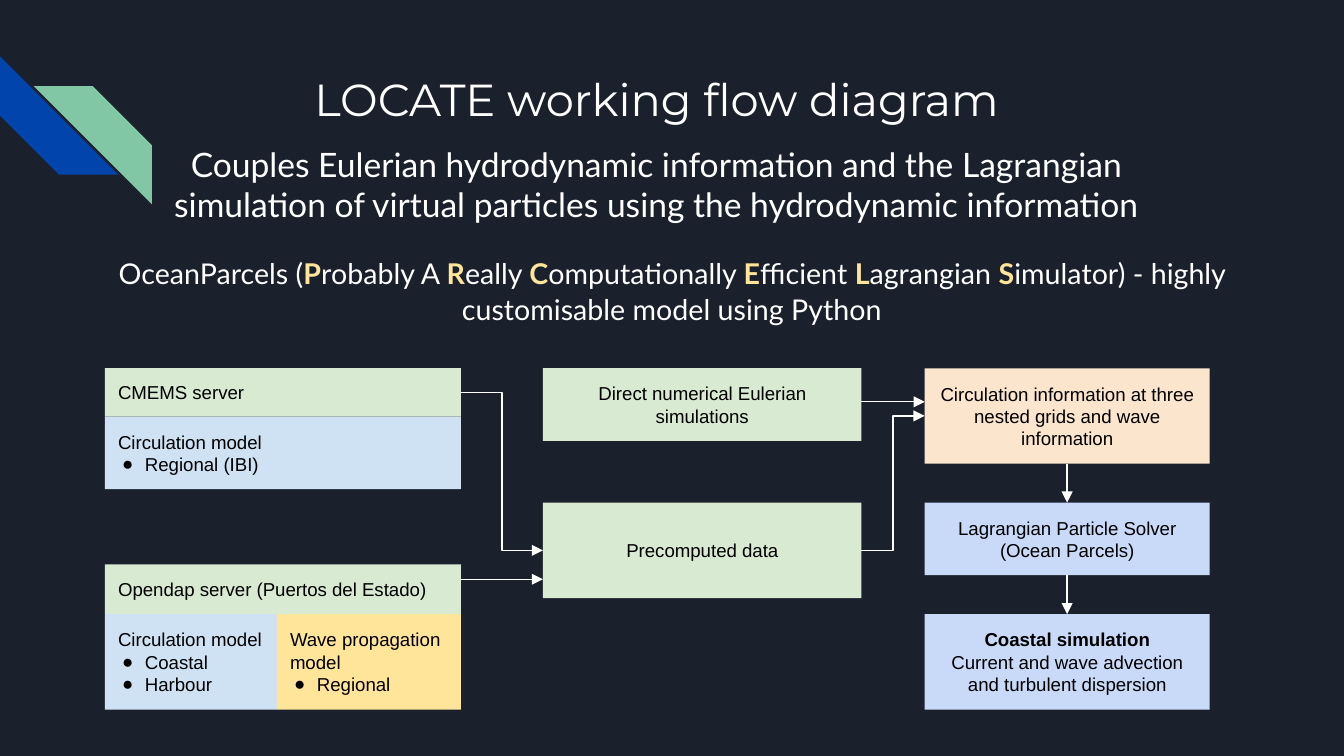
"""Build the LOCATE working flow diagram slide."""
from dataclasses import dataclass
from typing import Any

from lxml.etree import SubElement
from pptx import Presentation
from pptx.dml.color import RGBColor
from pptx.enum.shapes import MSO_CONNECTOR, MSO_SHAPE
from pptx.enum.text import MSO_ANCHOR, MSO_AUTO_SIZE, PP_ALIGN
from pptx.oxml.ns import qn
from pptx.util import Inches, Pt

WHITE = RGBColor(0xFF, 0xFF, 0xFF)
BLACK = RGBColor(0x00, 0x00, 0x00)
NAVY = RGBColor(0x1B, 0x21, 0x2C)
BLUE = RGBColor(0x01, 0x45, 0xAC)
MINT = RGBColor(0x82, 0xC7, 0xA5)
GREEN = RGBColor(0xD9, 0xEA, 0xD3)
SKY = RGBColor(0xCF, 0xE2, 0xF3)
YELLOW = RGBColor(0xFF, 0xE5, 0x99)
PEACH = RGBColor(0xFC, 0xE5, 0xCD)
PERIWINKLE = RGBColor(0xC9, 0xDA, 0xF8)

WIDTH = Inches(10)
HEIGHT = WIDTH * 9 // 16
COLS = (0.78, 2.06, 3.43, 4.04, 6.41, 6.88, 9.0)
ROWS = (2.74, 3.1, 3.28, 3.45, 3.64, 3.74, 4.2, 4.28, 4.45, 4.57, 5.28)


@dataclass(frozen=True)
class Style:
    """Format of a block of text; accent colours the words between asterisks."""
    font: str
    size: float
    color: RGBColor
    accent: RGBColor
    para: dict[str, Any]


@dataclass(frozen=True)
class Box:
    """Filled box between grid edges; lines starting with '- ' are bullets."""
    name: str
    cols: tuple[int, int]
    rows: tuple[int, int]
    fill: RGBColor
    lines: tuple[str, ...]
    align: PP_ALIGN = PP_ALIGN.CENTER


@dataclass(frozen=True)
class Link:
    """Arrow joining connection sites of two boxes."""
    start: str
    start_site: int
    end: str
    end_site: int
    kind: MSO_CONNECTOR = MSO_CONNECTOR.STRAIGHT


LEFT = PP_ALIGN.LEFT
BOXES = (
    Box("direct", (3, 4), (0, 2), GREEN, ("Direct numerical Eulerian simulations",)),
    Box("precomputed", (3, 4), (5, 8), GREEN, ("Precomputed data",)),
    Box("opendap", (0, 2), (6, 9), GREEN, ("Opendap server (Puertos del Estado)",), LEFT),
    Box("cmems", (0, 2), (0, 1), GREEN, ("CMEMS server",), LEFT),
    Box("local", (0, 1), (9, 10), SKY, ("Circulation model", "- Coastal", "- Harbour"), LEFT),
    Box("regional", (0, 2), (1, 4), SKY, ("Circulation model", "- Regional (IBI)"), LEFT),
    Box("wave", (1, 2), (9, 10), YELLOW, ("Wave propagation model", "- Regional"), LEFT),
    Box("nested", (5, 6), (0, 3), PEACH,
        ("Circulation information at three nested grids and wave information",)),
    Box("solver", (5, 6), (5, 7), PERIWINKLE, ("Lagrangian Particle Solver (Ocean Parcels)",)),
    Box("coastal", (5, 6), (9, 10), PERIWINKLE,
        ("*Coastal simulation*", "Current and wave advection and turbulent dispersion")),
)
LINKS = (
    Link("cmems", 3, "precomputed", 1, MSO_CONNECTOR.ELBOW),
    Link("precomputed", 3, "nested", 1, MSO_CONNECTOR.ELBOW),
    Link("nested", 2, "solver", 0),
    Link("solver", 2, "coastal", 0),
)
SIDE_ARROWS = ((COLS[4], COLS[5], 2.99), (COLS[2], COLS[3], 4.31))

CENTERED = {"alignment": PP_ALIGN.CENTER}
TITLE = Style("Montserrat", 24, WHITE, WHITE, CENTERED)
SUBTITLE = Style("Lato", 18, WHITE, WHITE, CENTERED)
BODY = Style("Lato", 15.3, WHITE, YELLOW,
             CENTERED | {"line_spacing": 1.05, "space_after": Pt(12)})


def set_all(obj: Any, values: dict[str, Any]) -> None:
    """Set every attribute named in values."""
    for name, value in values.items():
        setattr(obj, name, value)


def add_bullet(p: Any) -> None:
    """Give a paragraph a hanging black bullet."""
    pPr = p._p.get_or_add_pPr()
    pPr.set("marL", str(Inches(0.2)))
    pPr.set("indent", str(Inches(-0.17)))
    color = SubElement(pPr, qn("a:buClr"))
    SubElement(color, qn("a:srgbClr"), val=str(BLACK))
    SubElement(pPr, qn("a:buFont"), typeface="Arial")
    SubElement(pPr, qn("a:buChar"), char="●")


def write(tf: Any, lines: tuple[str, ...], style: Style, anchor: MSO_ANCHOR) -> None:
    """Fill a text frame, setting words between asterisks in bold accent."""
    set_all(tf, {"word_wrap": True, "auto_size": MSO_AUTO_SIZE.NONE, "vertical_anchor": anchor}
            | {f"margin_{side}": Inches(0.1) for side in ("left", "right", "top", "bottom")})
    for i, line in enumerate(lines):
        p = tf.add_paragraph() if i else tf.paragraphs[0]
        set_all(p, style.para)
        if line.startswith("- "):
            add_bullet(p)
        for j, part in enumerate(line.removeprefix("- ").split("*")):
            if part:
                r = p.add_run()
                r.text = part
                strong = j % 2 == 1
                set_all(r.font, {"name": style.font, "size": Pt(style.size), "bold": strong})
                r.font.color.rgb = style.accent if strong else style.color


def add_filled(s: Any, shape: MSO_SHAPE, at: tuple[float, ...], fill: RGBColor) -> Any:
    """Add a plain filled shape without outline or shadow."""
    sp = s.shapes.add_shape(shape, *map(Inches, at))
    sp.shadow.inherit = False
    sp.fill.solid()
    sp.fill.fore_color.rgb = fill
    sp.line.fill.background()
    return sp


def add_box(s: Any, box: Box) -> Any:
    """Draw one box of the diagram."""
    (left, right), (top, bottom) = (COLS[i] for i in box.cols), (ROWS[i] for i in box.rows)
    sp = add_filled(s, MSO_SHAPE.RECTANGLE, (left, top, right - left, bottom - top), box.fill)
    style = Style("Arial", 10, BLACK, BLACK, {"alignment": box.align})
    write(sp.text_frame, box.lines, style, MSO_ANCHOR.MIDDLE)
    return sp


def add_arrow(s: Any, kind: MSO_CONNECTOR, ends: tuple[float, ...] = (0, 0, 0, 0)) -> Any:
    """Add a thin white arrow."""
    c = s.shapes.add_connector(kind, *map(Inches, ends))
    c.line.width = Pt(0.75)
    c.line.color.rgb = WHITE
    spPr = c._element.spPr
    SubElement(spPr.get_or_add_ln(), qn("a:tailEnd"), type="triangle")
    SubElement(spPr, qn("a:effectLst"))
    return c


def main() -> None:
    """Build and save the slide."""
    prs = Presentation()
    set_all(prs, {"slide_width": WIDTH, "slide_height": HEIGHT})
    s = prs.slides.add_slide(prs.slide_layouts[5])
    s.background.fill.solid()
    s.background.fill.fore_color.rgb = NAVY

    stripe = add_filled(s, MSO_SHAPE.DIAGONAL_STRIPE, (0, 0.42, 0.88, 0.88), BLUE)
    stripe.rotation = 270
    stripe = add_filled(s, MSO_SHAPE.DIAGONAL_STRIPE, (0.25, 0.64, 0.88, 0.88), MINT)
    stripe._element.spPr.xfrm.set("flipH", "1")

    title = s.shapes.title
    set_all(title, {"left": Inches(1.18), "top": Inches(0.43),
                    "width": Inches(7.41), "height": Inches(1)})
    write(title.text_frame, ("LOCATE working flow diagram",), TITLE, MSO_ANCHOR.TOP)

    shapes = {box.name: add_box(s, box) for box in BOXES}
    for link in LINKS:
        c = add_arrow(s, link.kind)
        c.begin_connect(shapes[link.start], link.start_site)
        c.end_connect(shapes[link.end], link.end_site)
    for x1, x2, y in SIDE_ARROWS:
        add_arrow(s, MSO_CONNECTOR.STRAIGHT, (x1, y, x2, y))

    texts = (
        ((1.18, 0.97, 7.41, 0.81), SUBTITLE,
         "Couples Eulerian hydrodynamic information and the Lagrangian "
         "simulation of virtual particles using the hydrodynamic information"),
        ((0.69, 1.79, 8.62, 0.89), BODY,
         "OceanParcels (*P*robably A *R*eally *C*omputationally *E*fficient "
         "*L*agrangian *S*imulator) - highly customisable model using Python"),
    )
    for at, style, text in texts:
        tb = s.shapes.add_textbox(*map(Inches, at))
        write(tb.text_frame, (text,), style, MSO_ANCHOR.TOP)

    prs.save("out.pptx")


if __name__ == "__main__":
    main()
